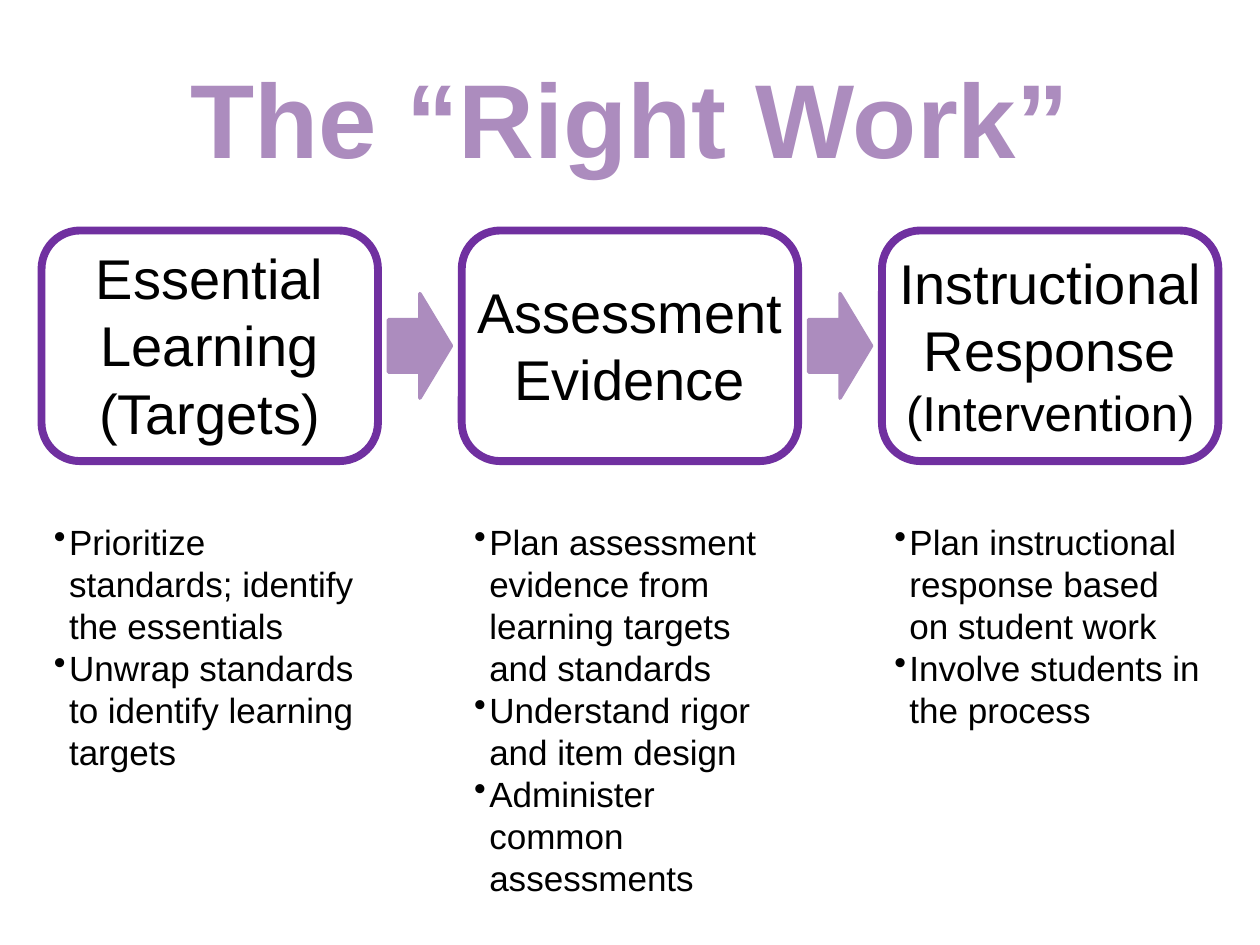
from lxml import etree
from pptx import Presentation
from pptx.dml.color import RGBColor
from pptx.enum.shapes import MSO_SHAPE as SHAPE
from pptx.enum.text import MSO_ANCHOR as ANCHOR, PP_ALIGN as ALIGN
from pptx.oxml.ns import qn
from pptx.util import Inches, Pt

PURPLE = RGBColor(0x70, 0x30, 0xA0)
LILAC = RGBColor(0xAC, 0x8C, 0xBE)
BLACK = RGBColor(0, 0, 0)

TITLE = "The “Right Work”"
# Heading runs (text, size), heading height, bullets, bullet box height
STEPS = [
    ([("Essential Learning (Targets)", 32)], 1.72,
     ["Prioritize standards; identify the essentials",
      "Unwrap standards to identify learning targets"], 2.12),
    ([("Assessment Evidence", 32)], 1.18,
     ["Plan assessment evidence from learning targets and standards",
      "Understand rigor and item design",
      "Administer common assessments"], 3.13),
    ([("Instructional Response ", 32), ("(Intervention)", 28)], 1.65,
     ["Plan instructional response based on student work",
      "Involve students in the process"], 1.78),
]

# Layout in inches
LEFT, PITCH, BOX_W = 0.33, 3.335, 2.67
BOX_TOP, BOX_H = 1.83, 1.83
MIDDLE = BOX_TOP + BOX_H / 2
BULLET_TOP = 4.08
ARROW_W, ARROW_H = 0.83, 0.5

prs = Presentation()
prs.slide_width, prs.slide_height = Inches(10), Inches(7.5)
s = prs.slides.add_slide(prs.slide_layouts[6])


def add_text(x, y, w, h, paragraphs, color=BLACK, bold=False,
             align=ALIGN.LEFT, anchor=ANCHOR.TOP, bullet=False):
    """Add a text box; each paragraph is a list of (text, size) runs."""
    sp = s.shapes.add_textbox(Inches(x), Inches(y), Inches(w), Inches(h))
    tf = sp.text_frame
    tf.word_wrap = True
    tf.vertical_anchor = anchor
    for i, runs in enumerate(paragraphs):
        p = tf.paragraphs[0] if i == 0 else tf.add_paragraph()
        p.alignment = align
        if bullet:
            pPr = p._p.get_or_add_pPr()
            pPr.set("marL", str(Inches(0.12)))
            pPr.set("indent", str(Inches(-0.12)))
            etree.SubElement(pPr, qn("a:buChar")).set("char", "•")
        for text, size in runs:
            r = p.add_run()
            r.text = text
            r.font.name = "Arial"
            r.font.size = Pt(size)
            r.font.bold = bold
            r.font.color.rgb = color


def add_shape(kind, x, y, w, h, line, width, fill=None):
    sp = s.shapes.add_shape(kind, Inches(x), Inches(y), Inches(w), Inches(h))
    sp.shadow.inherit = False
    sp.line.color.rgb = line
    sp.line.width = Pt(width)
    if fill is None:
        sp.fill.background()
    else:
        sp.fill.solid()
        sp.fill.fore_color.rgb = fill
    return sp


# Title
add_text(0.5, 0.3, 9, 1.25, [[(TITLE, 60)]], color=LILAC, bold=True,
         align=ALIGN.CENTER, anchor=ANCHOR.MIDDLE)

for i, (heading, head_h, bullets, bullets_h) in enumerate(STEPS):
    x = LEFT + i * PITCH
    # Heading in its frame
    add_text(x, MIDDLE - head_h / 2, BOX_W, head_h, [heading],
             align=ALIGN.CENTER)
    add_shape(SHAPE.ROUNDED_RECTANGLE, x, BOX_TOP, BOX_W, BOX_H, PURPLE, 4.5)
    # Arrow in the gap before the frame, turned to point right
    if i:
        gap_center = x - (PITCH - BOX_W) / 2
        arrow = add_shape(SHAPE.DOWN_ARROW, gap_center - ARROW_W / 2,
                          MIDDLE - ARROW_H / 2, ARROW_W, ARROW_H,
                          LILAC, 2, LILAC)
        arrow.rotation = 270
    # Bullets below
    add_text(x, BULLET_TOP, BOX_W, bullets_h, [[(b, 20)] for b in bullets],
             bullet=True)

prs.save("out.pptx")
